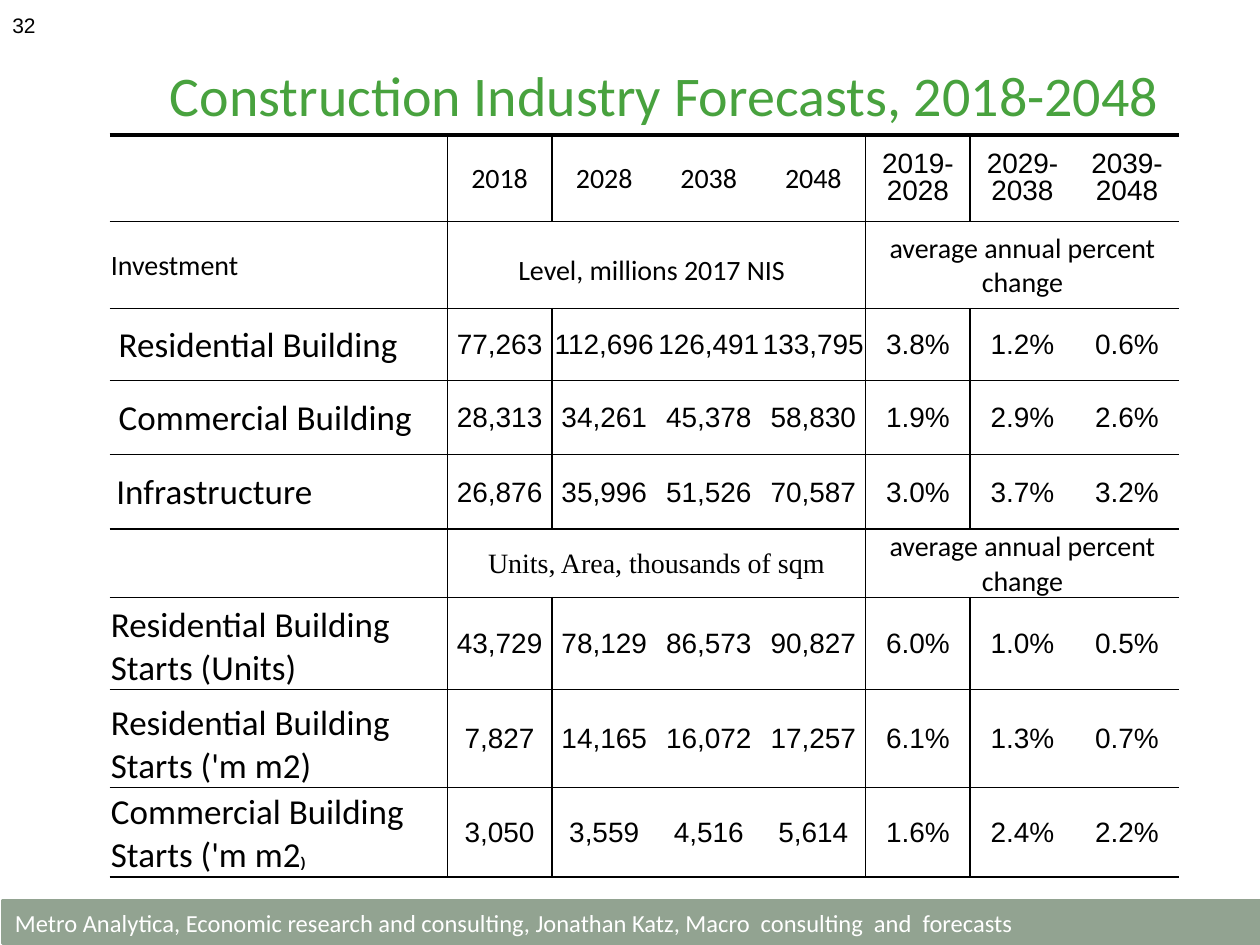
"""Build the construction industry forecast slide with its table."""
from pptx import Presentation
from pptx.dml.color import RGBColor
from pptx.enum.shapes import MSO_SHAPE
from pptx.enum.text import MSO_ANCHOR as ANCHOR, PP_ALIGN as ALIGN
from pptx.oxml import parse_xml
from pptx.oxml.ns import nsdecls
from pptx.util import Inches, Pt

COLORS = {"green": "48A23E", "sage": "92A391", "black": "000000", "white": "FFFFFF"}
NUMBER = ("Times New Roman", 16)
LABEL = ("Calibri", 20)
SMALL = ("Calibri", 16)


def add_run(p, text, font, size, color="black", rtl=False):
    r = p.add_run()
    r.text = text
    r.font.name, r.font.size = font, Pt(size)
    r.font.color.rgb = RGBColor.from_string(COLORS[color])
    if rtl:
        p._p.get_or_add_pPr().set("rtl", "1")
        r._r.get_or_add_rPr().append(parse_xml(f'<a:cs {nsdecls("a")} typeface="Arial"/>'))
    return r


def add_border(cell, side, width):
    cell._tc.get_or_add_tcPr().append(parse_xml(
        f'<a:ln{side} {nsdecls("a")} w="{Pt(width)}"><a:solidFill>'
        f'<a:srgbClr val="{COLORS["black"]}"/></a:solidFill></a:ln{side}>'))


prs = Presentation()
prs.slide_width, prs.slide_height = Inches(10), Inches(7.5)
slide = prs.slides.add_slide(prs.slide_layouts[5])

footer = slide.shapes.add_shape(
    MSO_SHAPE.RECTANGLE, Inches(0.02), Inches(7.15), Inches(10.01), Inches(0.34))
footer.shadow.inherit = False
footer.fill.solid()
footer.fill.fore_color.rgb = RGBColor.from_string(COLORS["sage"])
footer.line.color.rgb = RGBColor.from_string(COLORS["sage"])
footer.line.width = Pt(2)
tf = footer.text_frame
tf.vertical_anchor = ANCHOR.MIDDLE
tf.paragraphs[0].alignment = ALIGN.LEFT
add_run(tf.paragraphs[0], "Metro Analytica, Economic research and consulting, Jonathan Katz, "
        "Macro  consulting  and  forecasts", "Calibri", 14, "white")

title = slide.shapes.title
title.left, title.top, title.width, title.height = (
    Inches(1.14), Inches(0.15), Inches(8.27), Inches(1.2))
title.text_frame.vertical_anchor = ANCHOR.MIDDLE
p = title.text_frame.paragraphs[0]
p.alignment = ALIGN.CENTER
add_run(p, "Construction Industry Forecasts, 2018-2048", "Calibri", 32, "green")

page = slide.shapes.add_textbox(0, 0, Inches(2.33), Inches(0.4))
page.text_frame.word_wrap = True
page.text_frame.vertical_anchor = ANCHOR.MIDDLE
add_run(page.text_frame.paragraphs[0], "32", "Arial", 12)

CHANGE = "average annual percent change"
ROWS = [
    ["", "2018", "2028", "2038", "2048", "2019-2028", "2029-2038", "2039-2048"],
    ["Investment", "Level, millions 2017 NIS", "", "", "", CHANGE, "", ""],
    [" Residential Building", "77,263", "112,696", "126,491", "133,795", "3.8%", "1.2%", "0.6%"],
    [" Commercial Building", "28,313", "34,261", "45,378", "58,830", "1.9%", "2.9%", "2.6%"],
    ["Infrastructure", "26,876", "35,996", "51,526", "70,587", "3.0%", "3.7%", "3.2%"],
    ["", "Units, Area, thousands of sqm", "", "", "", CHANGE, "", ""],
    ["Residential Building Starts (Units)",
     "43,729", "78,129", "86,573", "90,827", "6.0%", "1.0%", "0.5%"],
    ["Residential Building Starts ('m m2)",
     "7,827", "14,165", "16,072", "17,257", "6.1%", "1.3%", "0.7%"],
    ["Commercial Building Starts ('m m2",
     "3,050", "3,559", "4,516", "5,614", "1.6%", "2.4%", "2.2%"],
]
HEIGHTS = [0.69, 0.69, 0.57, 0.59, 0.59, 0.49, 0.73, 0.78, 0.71]
WIDTHS = [2.68] + [0.83] * 7
UNIT_ROWS = (1, 5)
LINES_BELOW = (0, 1, 2, 4, 5, 6, 8)

frame = slide.shapes.add_table(
    len(ROWS), len(WIDTHS), Inches(0.87), Inches(1.07), Inches(8.5), Inches(5.89))
table = frame.table
table.first_row = table.horz_banding = False
table._tbl.tblPr[0].text = "{2D5ABB26-0587-4C30-8999-92F81FD0307C}"
for col, width in zip(table.columns, WIDTHS):
    col.width = Inches(width)
for row, height in zip(table.rows, HEIGHTS):
    row.height = Inches(height)
for i in UNIT_ROWS:
    table.cell(i, 1).merge(table.cell(i, 4))
    table.cell(i, 5).merge(table.cell(i, 7))

for i, texts in enumerate(ROWS):
    for j, text in enumerate(texts):
        cell = table.cell(i, j)
        cell.margin_left = cell.margin_right = cell.margin_top = Inches(0.01)
        cell.margin_bottom = 0
        cell.vertical_anchor = ANCHOR.BOTTOM if j == 0 and i > 5 else ANCHOR.MIDDLE
        if j in (1, 5):
            add_border(cell, "L", 1)
        if j in (0, 4):
            add_border(cell, "R", 1)
        if i == 0:
            add_border(cell, "T", 2.25)
        elif i - 1 in LINES_BELOW:
            add_border(cell, "T", 1)
        if i in LINES_BELOW:
            add_border(cell, "B", 1)
        cell.fill.background()
        if not text:
            continue
        p = cell.text_frame.paragraphs[0]
        p.alignment = ALIGN.CENTER if j else ALIGN.LEFT
        if j == 0:
            if text == "Infrastructure":
                add_run(p, " ", "Calibri", 14)
            add_run(p, text, *(SMALL if i == 1 else LABEL))
        elif i == 0:
            add_run(p, text, *SMALL, rtl=j > 4)
            if j > 4:
                p.line_spacing = 0.87
        elif i in UNIT_ROWS:
            add_run(p, text, *(NUMBER if (i, j) == (5, 1) else SMALL))
        else:
            add_run(p, text, *NUMBER, rtl=True)

add_run(table.cell(1, 1).text_frame.paragraphs[0], " ", "Calibri", 24)
add_run(table.cell(8, 0).text_frame.paragraphs[0], ")", "Arial", 8).font.bold = True

prs.save("out.pptx")
